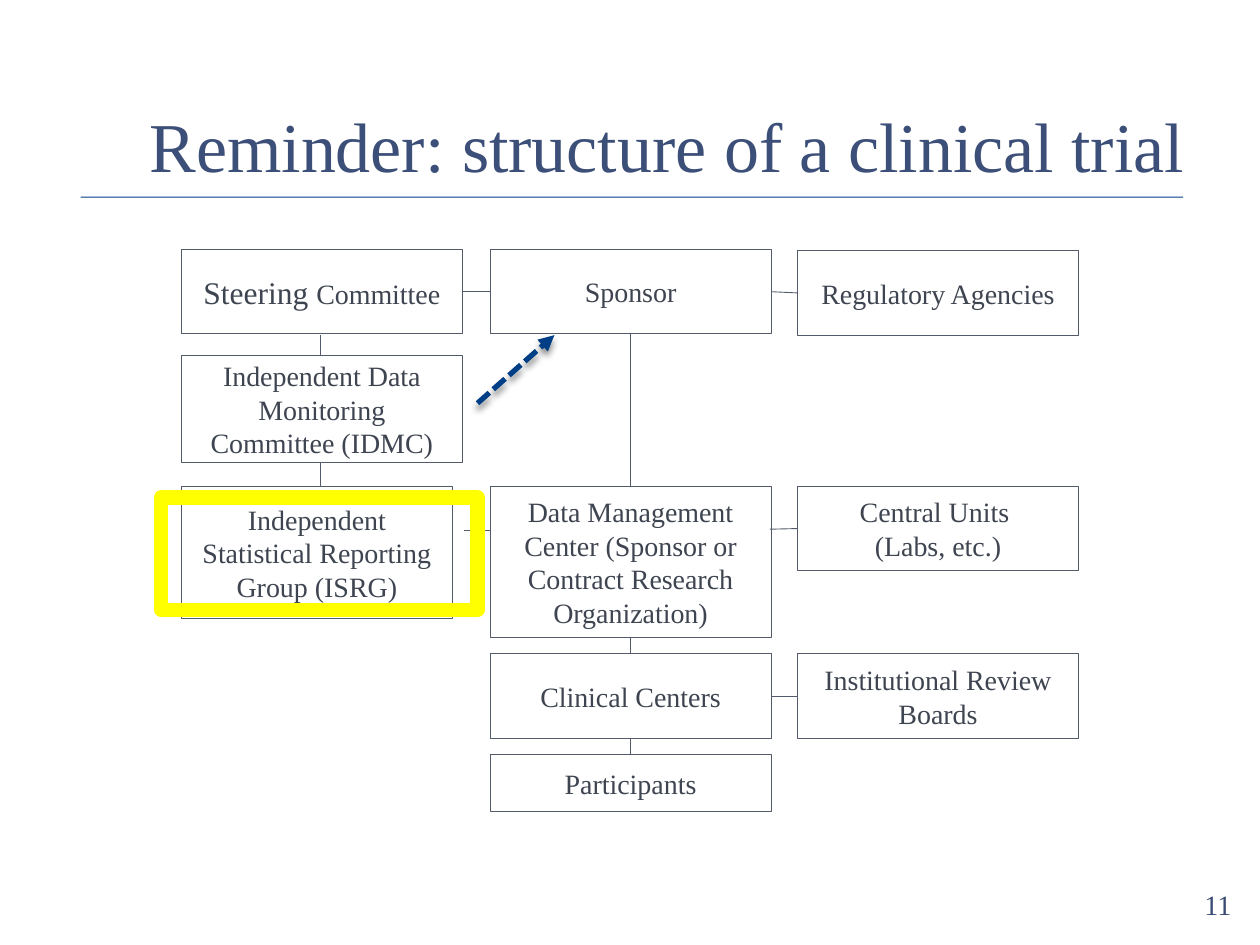
from lxml import etree
from pptx import Presentation
from pptx.dml.color import RGBColor
from pptx.enum import dml, shapes, text
from pptx.oxml import ns
from pptx.util import Inches, Pt

WHITE = RGBColor(0xFF, 0xFF, 0xFF)
NAVY = RGBColor(0x00, 0x3E, 0x86)
TITLE = RGBColor(0x3C, 0x4F, 0x78)
PAGE = RGBColor(0x39, 0x4B, 0x73)
INK = RGBColor(0x3E, 0x44, 0x50)
GREY = RGBColor(0x53, 0x5B, 0x6B)
YELLOW = RGBColor(0xFF, 0xFF, 0x00)

FONT = "Times New Roman"
SIZE = 16
BOTTOM, LEFT, RIGHT, TOP = 2, 1, 3, 0


def node(parent, tag, **attrs):
    return etree.SubElement(parent, ns.qn(tag), {k: str(v) for k, v in attrs.items()})


class Chart:
    """Style and current slide of the organization chart."""

    def __init__(self, slide):
        self.shapes = slide.shapes

    def words(self, shape, runs, align, anchor, color):
        frame = shape.text_frame
        frame.word_wrap = True
        frame.vertical_anchor = anchor
        para = frame.paragraphs[0]
        para.alignment = align
        for part, size in runs:
            if part == "\n":
                para.add_line_break()
                continue
            run = para.add_run()
            run.text = part
            run.font.name = FONT
            run.font.size = Pt(size)
            run.font.color.rgb = color

    def label(self, part, place, size, color, anchor):
        shape = self.shapes.add_textbox(*map(Inches, place))
        self.words(shape, [(part, size)], text.PP_ALIGN.RIGHT, anchor, color)

    def rect(self, place, fill=None, line=None, width=0.5):
        shape = self.shapes.add_shape(shapes.MSO_SHAPE.RECTANGLE, *map(Inches, place))
        shape.shadow.inherit = False
        if fill is None:
            shape.fill.background()
        else:
            shape.fill.solid()
            shape.fill.fore_color.rgb = fill
        if line is None:
            shape.line.fill.background()
        else:
            shape.line.color.rgb = line
            shape.line.width = Pt(width)
        return shape

    def box(self, place, *runs):
        shape = self.rect(place, WHITE, GREY)
        self.words(shape, runs, text.PP_ALIGN.CENTER, text.MSO_ANCHOR.MIDDLE, INK)
        return shape

    def line(self, start, end, color=GREY, width=0.5):
        link = self.shapes.add_connector(
            shapes.MSO_CONNECTOR.STRAIGHT, *map(Inches, start + end))
        link.line.color.rgb = color
        link.line.width = Pt(width)
        node(link._element.spPr, "a:effectLst")
        return link

    def join(self, first, side, second, other):
        link = self.line((0, 0), (1, 1))
        link.begin_connect(first, side)
        link.end_connect(second, other)

    def arrow(self, start, end):
        link = self.line(start, end, NAVY, 3)
        link.line.dash_style = dml.MSO_LINE.SQUARE_DOT
        node(link._element.spPr.find(ns.qn("a:ln")), "a:tailEnd", type="triangle")
        self.shade(link, 43, 4, 3)

    def shade(self, shape, alpha, blur, dist):
        effects = shape._element.spPr.find(ns.qn("a:effectLst"))
        outer = node(effects, "a:outerShdw", blurRad=int(Pt(blur)), dist=int(Pt(dist)),
                     dir=90 * 60000, rotWithShape=0)
        color = node(outer, "a:srgbClr", val="000000")
        node(color, "a:alpha", val=alpha * 1000)


def main():
    deck = Presentation()
    deck.slide_width, deck.slide_height = Inches(10), Inches(7.5)
    chart = Chart(deck.slides.add_slide(deck.slide_layouts[6]))

    # Heading, rule and page number
    rule = chart.rect((0.64, 1.56, 8.75, 0.01), NAVY)
    chart.shade(rule, 75, 1, 1)
    chart.label("Reminder: structure of a clinical trial", (0.5, 0.28, 9, 1.25),
                40, TITLE, text.MSO_ANCHOR.BOTTOM)
    chart.label("11", (9.05, 7.05, 0.82, 0.25), SIZE, PAGE, text.MSO_ANCHOR.MIDDLE)

    # Long lines that run behind the boxes
    chart.line((2.54, 2.66), (2.54, 3.87))
    chart.line((5, 4.92), (5, 6.13))

    # Boxes: three columns, shared width and height
    col1, col2, col3 = 1.44, 3.89, 6.33
    row1, row2, row3 = 1.98, 3.86, 5.19
    wide, high = 2.23, 0.67
    sponsor = chart.box((col2, row1, wide, high), ("Sponsor", SIZE))
    chart.box((col1, row2, 2.15, 1.05),
              ("Independent Statistical Reporting Group (ISRG)", SIZE))
    steering = chart.box((col1, row1, wide, high),
                         ("Steering ", 18), ("Committee", SIZE))
    chart.box((col1, 2.82, wide, 0.85),
              ("Independent Data Monitoring Committee (IDMC)", SIZE))
    agency = chart.box((col3, row1 + 0.01, wide, high), ("Regulatory Agencies", SIZE))
    center = chart.box(
        (col2, row2, wide, 1.2),
        ("Data Management Center (Sponsor or Contract Research Organization)", SIZE))
    units = chart.box((col3, row2, wide, high),
                      ("Central Units ", SIZE), ("\n", SIZE), ("(Labs, etc.)", SIZE))
    clinics = chart.box((col2, row3, wide, high), ("Clinical Centers", SIZE))
    boards = chart.box((col3, row3, wide, high), ("Institutional Review Boards", SIZE))
    chart.box((col2, 5.99, wide, 0.45), ("Participants", SIZE))

    # Links between boxes
    chart.join(steering, RIGHT, sponsor, LEFT)
    chart.join(sponsor, RIGHT, agency, LEFT)
    chart.join(clinics, RIGHT, boards, LEFT)
    chart.join(sponsor, BOTTOM, center, TOP)
    chart.line((6.11, 4.2), (col3, 4.2)).end_connect(units, LEFT)
    chart.line((3.68, 4.21), (col2, 4.21))

    # Highlight and dashed arrow
    chart.rect((1.28, 3.95, 2.51, 0.89), line=YELLOW, width=8.25)
    chart.arrow((3.79, 3.2), (4.4, 2.66))

    deck.save("out.pptx")


if __name__ == "__main__":
    main()
